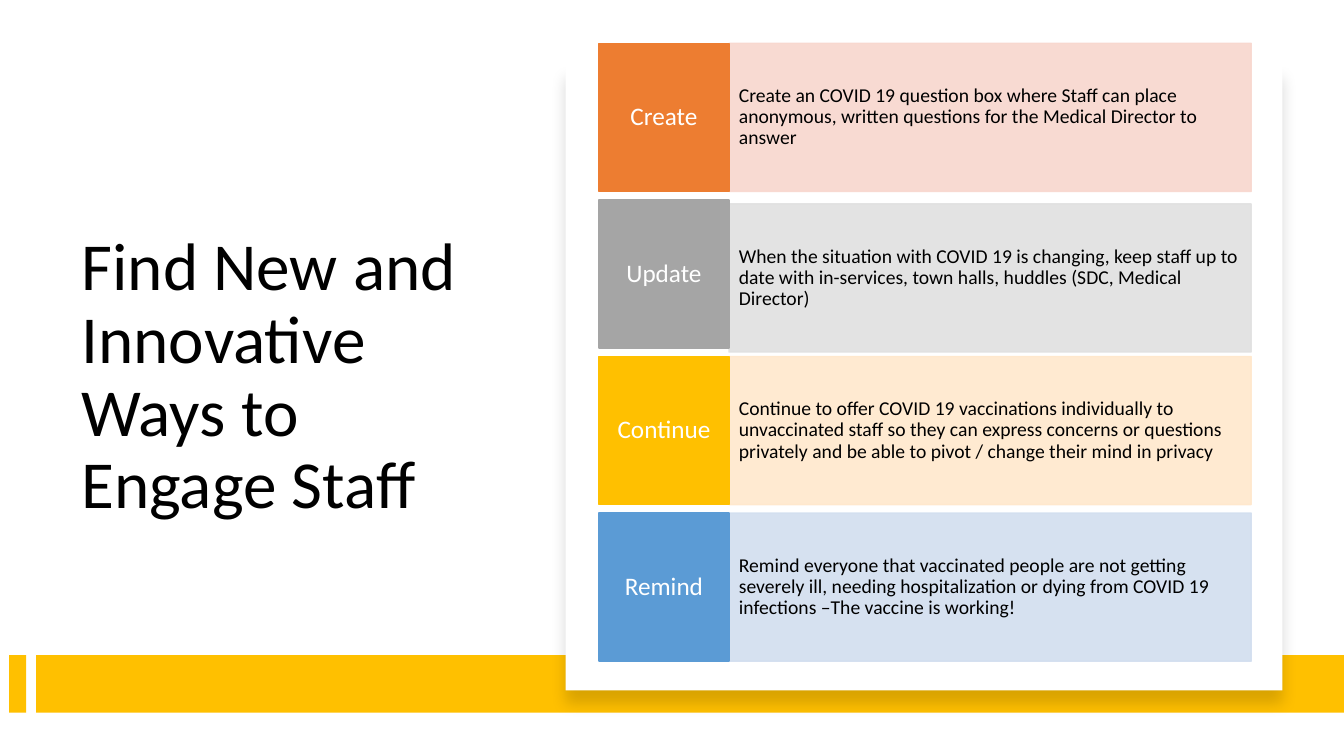
import lxml.etree
import pptx
import pptx.util
import pptx.dml.color
import pptx.enum.shapes
import pptx.enum.text
import pptx.oxml.ns
from dataclasses import dataclass

Inches = pptx.util.Inches
Pt = pptx.util.Pt
ALIGN = pptx.enum.text.PP_ALIGN
qn = pptx.oxml.ns.qn


@dataclass(frozen=True)
class Theme:
    font: str = "Calibri"
    title_size: int = 48
    label_size: int = 18
    body_size: int = 14
    dark: str = "000000"
    light: str = "FFFFFF"
    band: str = "FFC000"


THEME = Theme()

# Label, label colour, panel colour, panel offset, message
ROWS = [
    ("Create", "ED7D31", "F8D7CE", 0,
     "Create an COVID 19 question box where Staff can place anonymous, "
     "written questions for the Medical Director to answer"),
    ("Update", "A5A5A5", "E1E1E1", 0.04,
     "When the situation with COVID 19 is changing, keep staff up to date "
     "with in-services, town halls, huddles (SDC, Medical Director)"),
    ("Continue", "FFC000", "FFE8CC", 0,
     "Continue to offer COVID 19 vaccinations individually to unvaccinated "
     "staff so they can express concerns or questions privately and be able "
     "to pivot / change their mind in privacy"),
    ("Remind", "5B9BD5", "D2DEEF", 0,
     "Remind everyone that vaccinated people are not getting severely ill, "
     "needing hospitalization or dying from COVID 19 infections "
     "–The vaccine is working!"),
]


def rgb(value):
    return pptx.dml.color.RGBColor.from_string(value)


def add_text(sp, text, size, color, align=ALIGN.LEFT, inset_x=0.1, inset_y=0.05):
    tf = sp.text_frame
    tf.word_wrap = True
    tf.vertical_anchor = pptx.enum.text.MSO_ANCHOR.MIDDLE
    tf.margin_left = tf.margin_right = Inches(inset_x)
    tf.margin_top = tf.margin_bottom = Inches(inset_y)
    p = tf.paragraphs[0]
    p.alignment = align
    p.line_spacing = 0.9
    r = p.add_run()
    r.text = text
    r.font.name = THEME.font
    r.font.size = Pt(size)
    r.font.color.rgb = rgb(color)


def add_child(parent, tag, **attributes):
    values = {name: str(value) for name, value in attributes.items()}
    return lxml.etree.SubElement(parent, qn(tag), values)


def add_rect(slide, x, y, w, h, fill, outlined=False, opacity=100):
    sp = slide.shapes.add_shape(pptx.enum.shapes.MSO_SHAPE.RECTANGLE,
                                Inches(x), Inches(y), Inches(w), Inches(h))
    sp.shadow.inherit = False
    sp.fill.solid()
    sp.fill.fore_color.rgb = rgb(fill)
    if outlined:
        sp.line.color.rgb = rgb(fill)
        sp.line.width = Pt(1)
    else:
        sp.line.fill.background()
    if opacity < 100:
        for color in list(sp.element.spPr.iter(qn("a:srgbClr"))):
            add_child(color, "a:alpha", val=opacity * 1000)
    return sp


def add_shadow(sp, blur, distance, angle, opacity):
    effects = sp.element.spPr.find(qn("a:effectLst"))
    shadow = add_child(effects, "a:outerShdw", blurRad=int(Pt(blur)),
                       dist=int(Pt(distance)), dir=angle * 60000,
                       algn="t", rotWithShape=0)
    color = add_child(shadow, "a:srgbClr", val=THEME.dark)
    add_child(color, "a:alpha", val=opacity * 1000)


def build_title(slide, x, y, w, h):
    sp = slide.shapes.add_textbox(Inches(x), Inches(y), Inches(w), Inches(h))
    add_text(sp, "Find New and Innovative Ways to Engage Staff",
             THEME.title_size, THEME.dark)


def build_band(slide, x, y, w, h):
    tab_w, gap = 0.17, 0.1
    add_rect(slide, x, y, tab_w, h, THEME.band)
    start = tab_w + gap
    add_rect(slide, x + start, y, w - start, h, THEME.band)


def build_card(slide, x, y, w, h):
    sp = add_rect(slide, x, y, w, h, THEME.light)
    add_shadow(sp, blur=11, distance=10, angle=90, opacity=15)


def build_rows(slide, x, y, w, h):
    label_w, row_h = 1.29, 1.47
    pitch = (h - row_h) / (len(ROWS) - 1)
    for i, (label, color, tint, offset, message) in enumerate(ROWS):
        top = y + i * pitch
        # Message panel
        panel = add_rect(slide, x + label_w, top + offset, w - label_w, row_h,
                         tint, outlined=True, opacity=90)
        add_text(panel, message, THEME.body_size, THEME.dark, inset_y=0.37)
        # Label block
        block = add_rect(slide, x, top, label_w, row_h, color, outlined=True)
        add_text(block, label, THEME.label_size, THEME.light, ALIGN.CENTER,
                 inset_x=0.07, inset_y=0.14)


def main():
    prs = pptx.Presentation()
    prs.slide_width, prs.slide_height = Inches(13.33), Inches(7.5)
    slide = prs.slides.add_slide(prs.slide_layouts[6])
    build_title(slide, 0.71, 1.2, 4.15, 5.1)
    build_band(slide, 0.09, 6.5, 13.24, 0.57)
    build_card(slide, 5.61, 0.64, 7.11, 6.21)
    build_rows(slide, 5.94, 0.43, 6.47, 6.13)
    prs.save("out.pptx")


if __name__ == "__main__":
    main()
